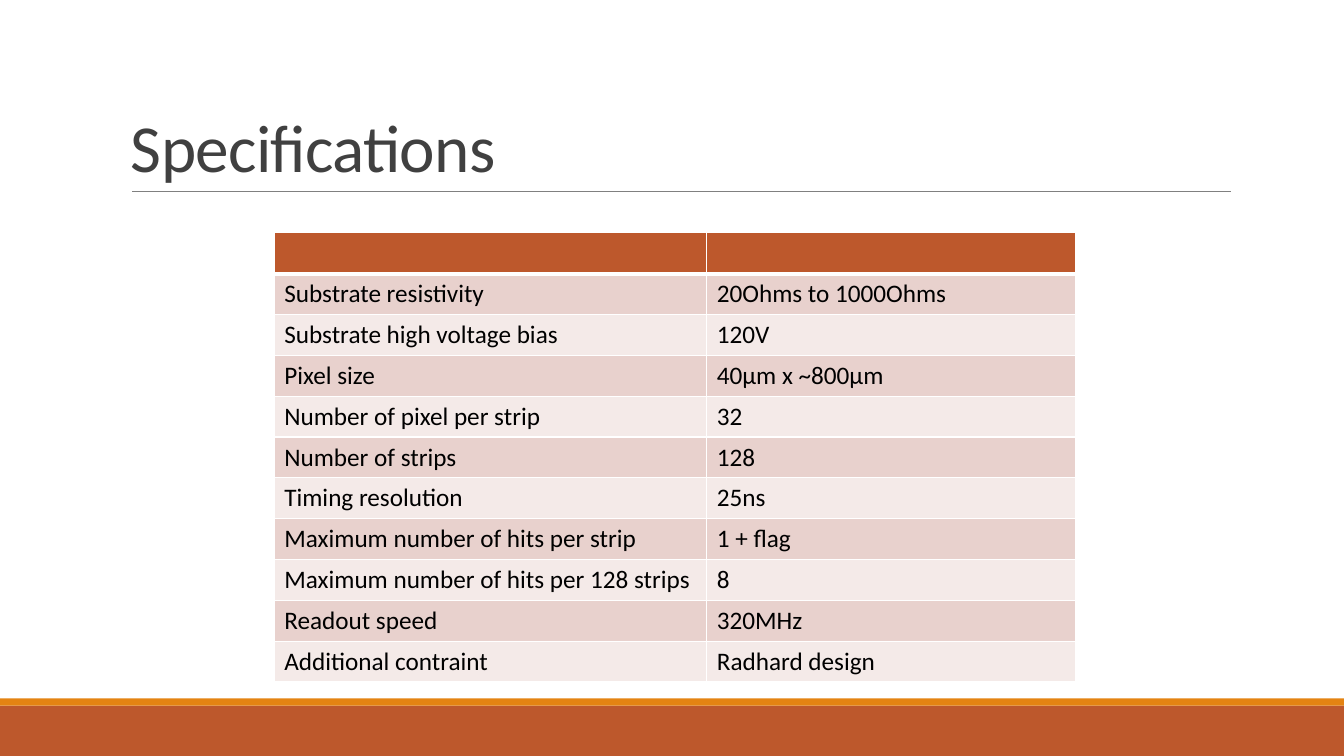
from dataclasses import dataclass

import lxml.etree
import pptx
import pptx.dml.color
import pptx.enum.shapes
import pptx.enum.text
import pptx.oxml.ns
import pptx.slide
import pptx.table
import pptx.util

Inches = pptx.util.Inches
Pt = pptx.util.Pt


@dataclass(frozen=True)
class Theme:
    font: str = "Calibri"
    title_size: float = 48
    table_size: float = 18
    title_text: str = "404040"
    table_text: str = "000000"
    rust: str = "BD582C"
    orange: str = "E48312"
    rule: str = "808080"
    border: str = "FFFFFF"
    bands: tuple[str, str] = ("E8D1CD", "F4EAE8")


@dataclass(frozen=True)
class FooterBar:
    top: float
    height: float
    color: str


@dataclass(frozen=True)
class Specification:
    quantity: str
    value: str


THEME = Theme()
SLIDE_WIDTH, SLIDE_HEIGHT = 13.33, 7.5
FOOTER_BARS = [
    FooterBar(7, 0.5, THEME.rust),
    FooterBar(6.93, 0.07, THEME.orange),
]
SPECIFICATIONS = [
    Specification("Substrate resistivity", "20Ohms to 1000Ohms"),
    Specification("Substrate high voltage bias", "120V"),
    Specification("Pixel size", "40µm x ~800µm"),
    Specification("Number of pixel per strip", "32"),
    Specification("Number of strips", "128"),
    Specification("Timing resolution", "25ns"),
    Specification("Maximum number of hits per strip", "1 + flag"),
    Specification("Maximum number of hits per 128 strips", "8"),
    Specification("Readout speed", "320MHz"),
    Specification("Additional contraint", "Radhard design"),
]
TABLE_LEFT, TABLE_TOP, TABLE_HEIGHT = 2.72, 2.31, 4.46
COLUMN_WIDTHS = (4.29, 3.66)


def rgb(color: str) -> pptx.dml.color.RGBColor:
    return pptx.dml.color.RGBColor.from_string(color)


def format_font(font, size: float, color: str) -> None:
    for attribute, value in {"name": THEME.font, "size": Pt(size)}.items():
        setattr(font, attribute, value)
    font.color.rgb = rgb(color)


def add_footer_bar(slide: pptx.slide.Slide, bar: FooterBar) -> None:
    band = slide.shapes.add_shape(
        pptx.enum.shapes.MSO_SHAPE.RECTANGLE,
        0, Inches(bar.top), Inches(SLIDE_WIDTH), Inches(bar.height),
    )
    band.shadow.inherit = False
    band.fill.solid()
    band.fill.fore_color.rgb = rgb(bar.color)
    band.line.fill.background()


def add_title_rule(slide: pptx.slide.Slide) -> None:
    rule = slide.shapes.add_connector(
        pptx.enum.shapes.MSO_CONNECTOR.STRAIGHT,
        Inches(1.31), Inches(1.9), Inches(12.21), Inches(1.9),
    )
    rule.line.color.rgb = rgb(THEME.rule)
    rule.line.width = Pt(0.5)
    lxml.etree.SubElement(rule._element.spPr, pptx.oxml.ns.qn("a:effectLst"))


def add_title(slide: pptx.slide.Slide, wording: str) -> None:
    frame = slide.shapes.add_textbox(
        Inches(1.2), Inches(0.31), Inches(11), Inches(1.59)
    ).text_frame
    frame_format = {
        "word_wrap": True,
        "vertical_anchor": pptx.enum.text.MSO_ANCHOR.BOTTOM,
    }
    for attribute, value in frame_format.items():
        setattr(frame, attribute, value)
    heading = frame.paragraphs[0]
    heading.line_spacing = 0.85
    run = heading.add_run()
    run.text = wording
    format_font(run.font, THEME.title_size, THEME.title_text)
    run._r.get_or_add_rPr().set("spc", "-50")


def set_borders(cell: pptx.table._Cell, widths: dict[str, float]) -> None:
    """Draw borders in points, keyed by edge in the order L, R, T, B."""
    properties = cell._tc.get_or_add_tcPr()
    for position, (edge, width) in enumerate(widths.items()):
        border = lxml.etree.Element(
            pptx.oxml.ns.qn(f"a:ln{edge}"), w=str(Pt(width))
        )
        fill = lxml.etree.SubElement(border, pptx.oxml.ns.qn("a:solidFill"))
        lxml.etree.SubElement(
            fill, pptx.oxml.ns.qn("a:srgbClr"), val=THEME.border
        )
        properties.insert(position, border)


def fill_row(
    table: pptx.table.Table, index: int, specification: Specification
) -> None:
    is_header = index == 0
    color = THEME.rust if is_header else THEME.bands[(index - 1) % 2]
    widths = {
        "L": 1,
        "R": 1,
        "T": 3 if index == 1 else 1,
        "B": 3 if is_header else 1,
    }
    wordings = (specification.quantity, specification.value)
    for cell, wording in zip(table.rows[index].cells, wordings):
        cell.fill.solid()
        cell.fill.fore_color.rgb = rgb(color)
        set_borders(cell, widths)
        cell.text = wording
        format_font(
            cell.text_frame.paragraphs[0].font,
            THEME.table_size, THEME.table_text,
        )
        for run in cell.text_frame.paragraphs[0].runs:
            format_font(run.font, THEME.table_size, THEME.table_text)


def add_specification_table(slide: pptx.slide.Slide) -> None:
    rows = [Specification("", ""), *SPECIFICATIONS]
    table = slide.shapes.add_table(
        len(rows), len(COLUMN_WIDTHS), Inches(TABLE_LEFT), Inches(TABLE_TOP),
        Inches(sum(COLUMN_WIDTHS)), Inches(TABLE_HEIGHT),
    ).table
    for column, width in zip(table.columns, COLUMN_WIDTHS):
        column.width = Inches(width)
    for index, specification in enumerate(rows):
        fill_row(table, index, specification)


def main() -> None:
    presentation = pptx.Presentation()
    presentation.slide_width = Inches(SLIDE_WIDTH)
    presentation.slide_height = Inches(SLIDE_HEIGHT)
    slide = presentation.slides.add_slide(presentation.slide_layouts[6])
    for bar in FOOTER_BARS:
        add_footer_bar(slide, bar)
    add_title_rule(slide)
    add_title(slide, "Specifications")
    add_specification_table(slide)
    presentation.save("out.pptx")


if __name__ == "__main__":
    main()
